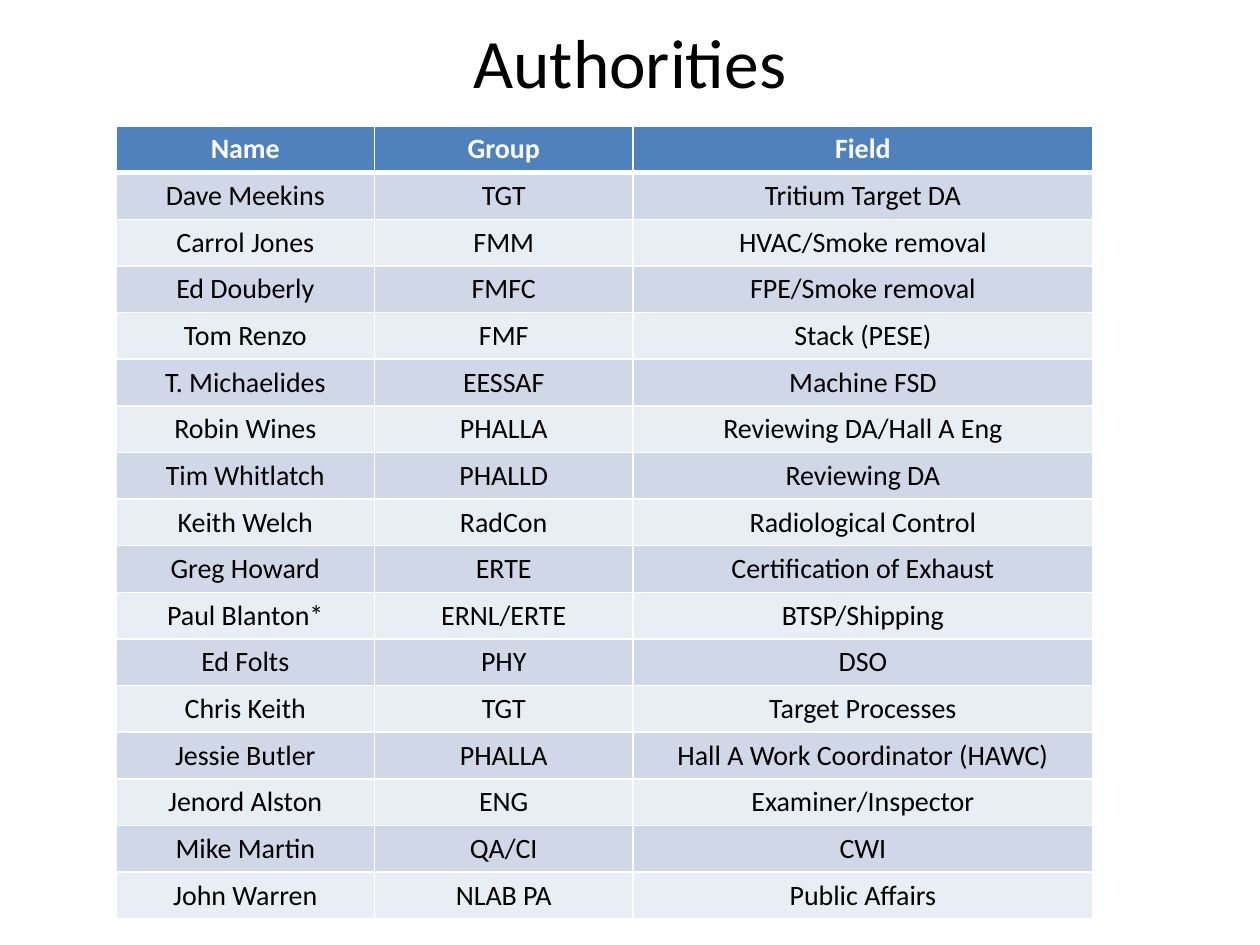
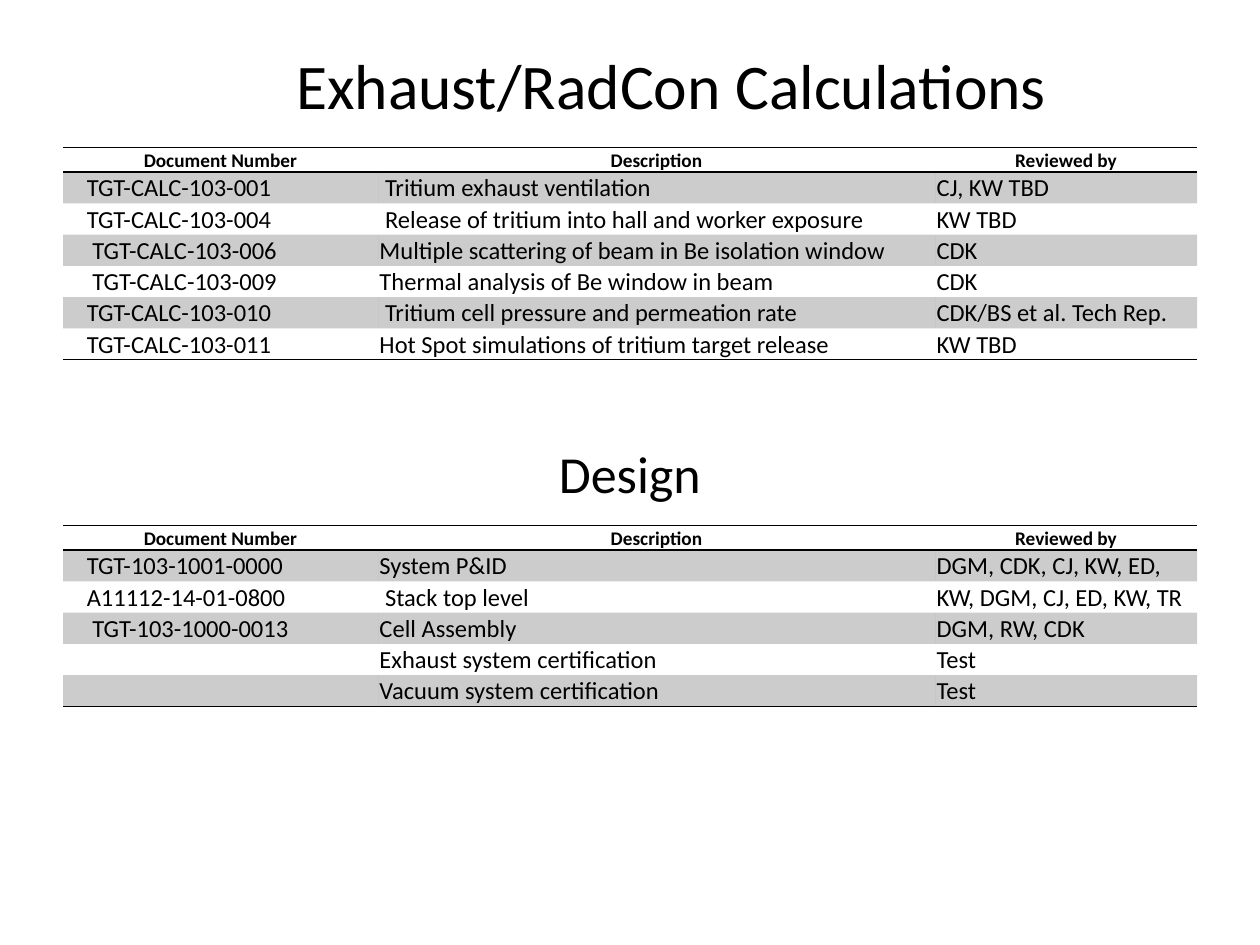
from lxml import etree
from pptx import Presentation
from pptx.dml.color import RGBColor
from pptx.enum.text import MSO_ANCHOR, PP_ALIGN
from pptx.oxml.ns import qn
from pptx.util import Cm, Pt

LEFT, CENTER = PP_ALIGN.LEFT, PP_ALIGN.CENTER
TOP, MIDDLE, BOTTOM = MSO_ANCHOR.TOP, MSO_ANCHOR.MIDDLE, MSO_ANCHOR.BOTTOM

FONT = "Calibri"
COLORS = {
    "text": "000000",
    "white": "FFFFFF",
    "header": "4F81BD",
    "band_dark": "D0D8E8",
    "band_light": "E9EDF4",
    "rule": "000000",
    "shade": "000000",
}
SHADE_OPACITY = 20

AUTHORITIES = [
    ("Name", "Group", "Field"),
    ("Dave Meekins", "TGT", "Tritium Target DA"),
    ("Carrol Jones", "FMM", "HVAC/Smoke removal"),
    ("Ed Douberly", "FMFC", "FPE/Smoke removal"),
    ("Tom Renzo", "FMF", "Stack (PESE)"),
    ("T. Michaelides", "EESSAF", "Machine FSD"),
    ("Robin Wines", "PHALLA", "Reviewing DA/Hall A Eng"),
    ("Tim Whitlatch", "PHALLD", "Reviewing DA"),
    ("Keith Welch", "RadCon", "Radiological Control"),
    ("Greg Howard", "ERTE", "Certification of Exhaust"),
    ("Paul Blanton*", "ERNL/ERTE", "BTSP/Shipping"),
    ("Ed Folts", "PHY", "DSO"),
    ("Chris Keith", "TGT", "Target Processes"),
    ("Jessie Butler", "PHALLA", "Hall A Work Coordinator (HAWC)"),
    ("Jenord Alston", "ENG", "Examiner/Inspector"),
    ("Mike Martin", "QA/CI", "CWI"),
    ("John Warren", "NLAB PA", "Public Affairs"),
]
DOCUMENT_HEADER = ("Document Number", "Description", "Reviewed by")
CALCULATIONS = [
    DOCUMENT_HEADER,
    ("TGT-CALC-103-001", " Tritium exhaust ventilation", "CJ, KW TBD"),
    ("TGT-CALC-103-004", " Release of tritium into hall and worker exposure", "KW TBD"),
    (" TGT-CALC-103-006", "Multiple scattering of beam in Be isolation window", "CDK"),
    (" TGT-CALC-103-009", "Thermal analysis of Be window in beam", "CDK"),
    ("TGT-CALC-103-010", " Tritium cell pressure and permeation rate", "CDK/BS et al. Tech Rep."),
    ("TGT-CALC-103-011", "Hot Spot simulations of tritium target release", "KW TBD"),
]
DESIGN = [
    DOCUMENT_HEADER,
    ("TGT-103-1001-0000", "System P&ID", "DGM, CDK, CJ, KW, ED,"),
    ("A11112-14-01-0800", " Stack top level", "KW, DGM, CJ, ED, KW, TR"),
    (" TGT-103-1000-0013", "Cell Assembly", "DGM, RW, CDK"),
    ("", "Exhaust system certification", "Test"),
    ("", "Vacuum system certification", "Test"),
]


def rgb(name):
    return RGBColor.from_string(COLORS[name])


def write(p, text, size, color="text", bold=False, align=CENTER):
    p.alignment = align
    if not text:
        # Keeps an empty cell from growing its row
        etree.SubElement(p._p, qn("a:endParaRPr"), sz=str(int(size * 100)))
        return
    r = p.add_run()
    r.text = text
    r.font.name, r.font.size, r.font.bold = FONT, Pt(size), bold
    r.font.color.rgb = rgb(color)


def add_title(s, box, text, size):
    tf = s.shapes.add_textbox(*map(Cm, box)).text_frame
    tf.word_wrap = True
    tf.vertical_anchor = MIDDLE
    write(tf.paragraphs[0], text, size)


def set_borders(cell, **sides):
    """Each side is (color, points), or None for no line."""
    tcPr = cell._tc.get_or_add_tcPr()
    for side in "LRTB":
        line = sides.get(side)
        ln = etree.SubElement(tcPr, qn(f"a:ln{side}"))
        if line:
            color, width = line
            ln.set("w", str(Pt(width)))
            fill = etree.SubElement(ln, qn("a:solidFill"))
            etree.SubElement(fill, qn("a:srgbClr"), val=COLORS[color])
        else:
            etree.SubElement(ln, qn("a:noFill"))


def set_fill(cell, color, opacity=100):
    if color is None:
        cell.fill.background()
        return
    cell.fill.solid()
    cell.fill.fore_color.rgb = rgb(color)
    if opacity < 100:
        clr = cell._tc.tcPr.find(f"{qn('a:solidFill')}/{qn('a:srgbClr')}")
        etree.SubElement(clr, qn("a:alpha"), val=str(opacity * 1000))


def add_grid(s, left, top, widths, heights):
    frame = s.shapes.add_table(len(heights), len(widths), Cm(left), Cm(top),
                               Cm(sum(widths)), Cm(sum(heights)))
    table = frame.table
    table.first_row = table.horz_banding = False
    for column, width in zip(table.columns, widths):
        column.width = Cm(width)
    for row, height in zip(table.rows, heights):
        row.height = Cm(height)
    return table


def add_authority_table(s, left, top, rows):
    table = add_grid(s, left, top, (5.21, 5.21, 9.27), [0.94] * len(rows))
    thin, thick = ("white", 1), ("white", 3)
    lines = [thin, thick] + [thin] * (len(rows) - 1)
    for i, row in enumerate(rows):
        header = i == 0
        band = "header" if header else "band_dark" if i % 2 else "band_light"
        for j, text in enumerate(row):
            cell = table.cell(i, j)
            cell.vertical_anchor = TOP
            set_borders(cell, L=thin, R=thin, T=lines[i], B=lines[i + 1])
            set_fill(cell, band)
            write(cell.text_frame.paragraphs[0], text, 16,
                  "white" if header else "text", header)


def add_document_table(s, left, top, rows):
    heights = [0.5] + [0.63] * (len(rows) - 1)
    table = add_grid(s, left, top, (6.35, 11.23, 5.28), heights)
    rule = ("rule", 1)
    # Rules above and below the header, and under the last row
    lines = [rule, rule] + [None] * (len(rows) - 2) + [rule]
    for i, row in enumerate(rows):
        header = i == 0
        for j, text in enumerate(row):
            cell = table.cell(i, j)
            number = j == 0 and not header
            cell.margin_left = Cm(0.48 if number else 0.03)
            cell.margin_right = cell.margin_top = Cm(0.03)
            cell.margin_bottom = 0
            cell.vertical_anchor = MIDDLE if number else BOTTOM
            set_borders(cell, T=lines[i], B=lines[i + 1])
            set_fill(cell, "shade" if i % 2 else None, SHADE_OPACITY)
            write(cell.text_frame.paragraphs[0], text, 11 if header else 14,
                  bold=header, align=CENTER if header else LEFT)


def authorities_slide(s):
    add_title(s, (1.27, 0.76, 22.86, 0.94), "Authorities", 39.6)
    add_authority_table(s, 2.34, 2.54, AUTHORITIES)


def documents_slide(s):
    add_document_table(s, 1.27, 2.97, CALCULATIONS)
    add_title(s, (1.27, 8.89, 22.86, 1.27), "Design", 29.7)
    add_title(s, (2.11, 0.91, 22.86, 1.57), "Exhaust/RadCon Calculations", 36.3)
    add_document_table(s, 1.27, 10.59, DESIGN)


def main():
    prs = Presentation()
    prs.slide_width, prs.slide_height = Cm(25.4), Cm(19.05)
    blank = prs.slide_layouts[6]
    for build in (authorities_slide, documents_slide):
        build(prs.slides.add_slide(blank))
    prs.save("out.pptx")


if __name__ == "__main__":
    main()
